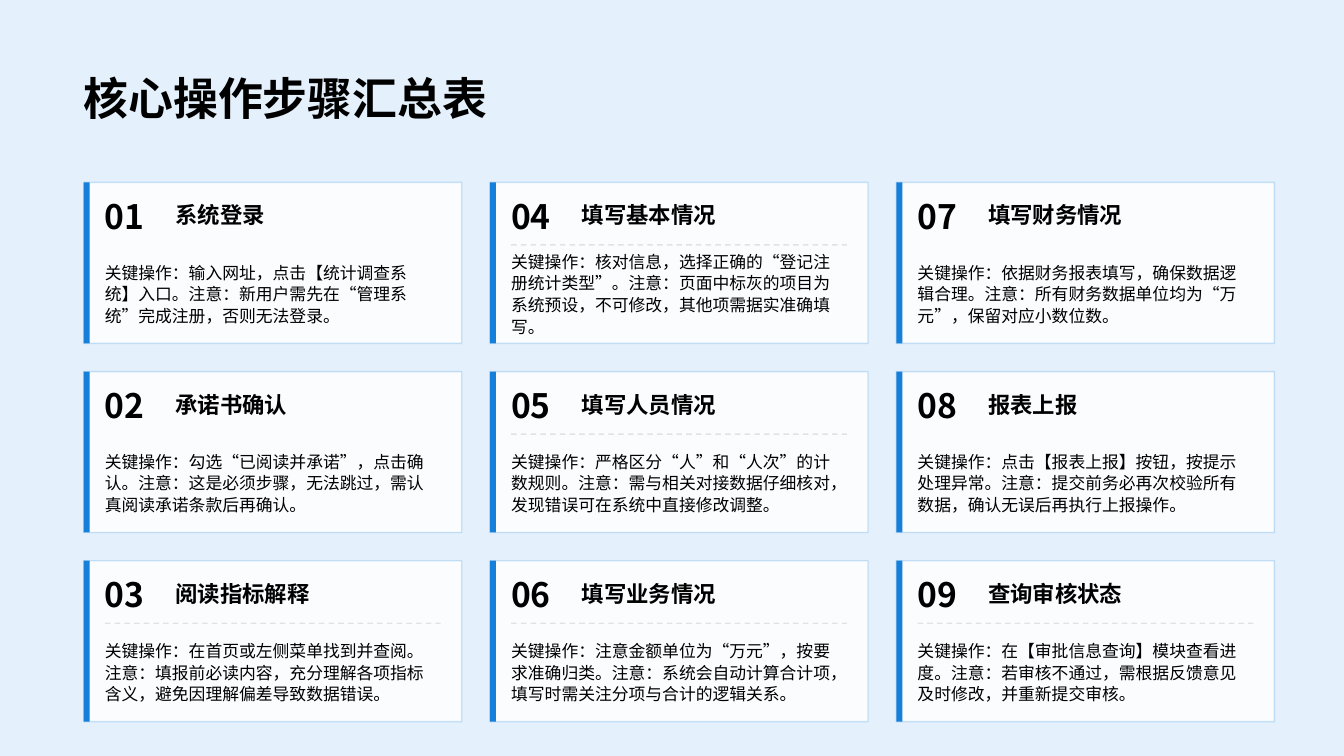
from lxml import etree
from pptx import Presentation
from pptx.dml.color import RGBColor
from pptx.enum.dml import MSO_LINE_DASH_STYLE as DASH
from pptx.enum.shapes import MSO_CONNECTOR, MSO_SHAPE
from pptx.enum.text import MSO_ANCHOR, MSO_AUTO_SIZE, PP_ALIGN
from pptx.oxml.ns import qn
from pptx.util import Inches, Pt

FONT = "Noto Sans CJK SC"
BACKGROUND, BLUE, WHITE, BLACK = "E4F0FB", "157FD9", "FFFFFF", "000000"

COLS, ROWS, GAP = 3, 3, 0.28
GRID = (0.83, 1.81, 11.81, 5.35)
TITLE_BOX = (0.83, 0.56, 11.67, 0.69)

# heading, key operation, divider shown; filled column by column
STEPS = [
    ("系统登录", "关键操作：输入网址，点击【统计调查系统】入口。注意：新用户需先在“管理系统”完成注册，否则无法登录。", False),
    ("承诺书确认", "关键操作：勾选“已阅读并承诺”，点击确认。注意：这是必须步骤，无法跳过，需认真阅读承诺条款后再确认。", False),
    ("阅读指标解释", "关键操作：在首页或左侧菜单找到并查阅。注意：填报前必读内容，充分理解各项指标含义，避免因理解偏差导致数据错误。", True),
    ("填写基本情况", "关键操作：核对信息，选择正确的“登记注册统计类型”。注意：页面中标灰的项目为系统预设，不可修改，其他项需据实准确填写。", True),
    ("填写人员情况", "关键操作：严格区分“人”和“人次”的计数规则。注意：需与相关对接数据仔细核对，发现错误可在系统中直接修改调整。", True),
    ("填写业务情况", "关键操作：注意金额单位为“万元”，按要求准确归类。注意：系统会自动计算合计项，填写时需关注分项与合计的逻辑关系。", True),
    ("填写财务情况", "关键操作：依据财务报表填写，确保数据逻辑合理。注意：所有财务数据单位均为“万元”，保留对应小数位数。", False),
    ("报表上报", "关键操作：点击【报表上报】按钮，按提示处理异常。注意：提交前务必再次校验所有数据，确认无误后再执行上报操作。", False),
    ("查询审核状态", "关键操作：在【审批信息查询】模块查看进度。注意：若审核不通过，需根据反馈意见及时修改，并重新提交审核。", True),
]


def paint(color_format, color, alpha=100):
    """Set a solid colour, with alpha as a percentage of opacity."""
    color_format.solid()
    color_format.fore_color.rgb = RGBColor.from_string(color)
    if alpha < 100:
        rgb = color_format._xPr.find(".//" + qn("a:srgbClr"))
        etree.SubElement(rgb, qn("a:alpha")).set("val", str(alpha * 1000))


def write(sp, text, size, bold=False, spacing=1.25):
    tf = sp.text_frame
    tf.word_wrap = True
    tf.auto_size = MSO_AUTO_SIZE.NONE
    tf.vertical_anchor = MSO_ANCHOR.MIDDLE
    tf.margin_left = tf.margin_right = tf.margin_top = tf.margin_bottom = 0
    p = tf.paragraphs[0]
    p.alignment = PP_ALIGN.LEFT
    p.line_spacing = spacing
    r = p.add_run()
    r.text = text
    r.font.size, r.font.bold, r.font.name = Pt(size), bold, FONT
    paint(r.font.fill, BLACK)
    etree.SubElement(r._r.get_or_add_rPr(), qn("a:ea")).set("typeface", FONT)


def add_text(slide, box, *args, **kwargs):
    write(slide.shapes.add_textbox(*map(Inches, box)), *args, **kwargs)


def add_panel(slide, box, color, alpha=100):
    sp = slide.shapes.add_shape(MSO_SHAPE.RECTANGLE, *map(Inches, box))
    sp.shadow.inherit = False
    paint(sp.fill, color, alpha)
    sp.line.fill.background()
    return sp


def add_divider(slide, x, y, width):
    line = slide.shapes.add_connector(
        MSO_CONNECTOR.STRAIGHT, *map(Inches, (x, y, x + width, y)))
    etree.SubElement(line._element.spPr, qn("a:effectLst"))
    line.line.width = Pt(1)
    paint(line.line.fill, BLACK, 10)
    line.line.dash_style = DASH.DASH


def add_title(slide, box, text):
    title = slide.shapes.title
    title.left, title.top, title.width, title.height = map(Inches, box)
    write(title, text, 32, bold=True)


def add_card(slide, box, number, heading, operation, divided):
    x, y, w, h = box
    inner_x, inner_w = x + 0.21, w - 0.42
    frame = add_panel(slide, box, WHITE, 85)
    frame.line.width = Pt(1)
    paint(frame.line.fill, BLUE, 20)
    add_panel(slide, (x, y, 0.06, h), BLUE)
    add_text(slide, (inner_x, y + 0.07, 0.56, 0.42), f"{number:02d}", 24, bold=True)
    add_text(slide, (x + 0.91, y + 0.11, w - 1.04, 0.36), heading, 16, bold=True)
    if divided:
        add_divider(slide, inner_x, y + 0.62, inner_w)
    add_text(slide, (inner_x, y + 0.72, inner_w, 0.76), operation, 12, spacing=1.08)


def add_card_grid(slide, box, steps):
    x, y, w, h = box
    card_w = (w - GAP * (COLS - 1)) / COLS
    card_h = (h - GAP * (ROWS - 1)) / ROWS
    for i, step in enumerate(steps):
        col, row = divmod(i, ROWS)
        card = (x + col * (card_w + GAP), y + row * (card_h + GAP), card_w, card_h)
        add_card(slide, card, i + 1, *step)


def main():
    prs = Presentation()
    prs.slide_width, prs.slide_height = Inches(13.33), Inches(7.5)
    slide = prs.slides.add_slide(prs.slide_layouts.get_by_name("Title Only"))
    paint(slide.background.fill, BACKGROUND)
    add_title(slide, TITLE_BOX, "核心操作步骤汇总表")
    add_card_grid(slide, GRID, STEPS)
    prs.save("out.pptx")


if __name__ == "__main__":
    main()
